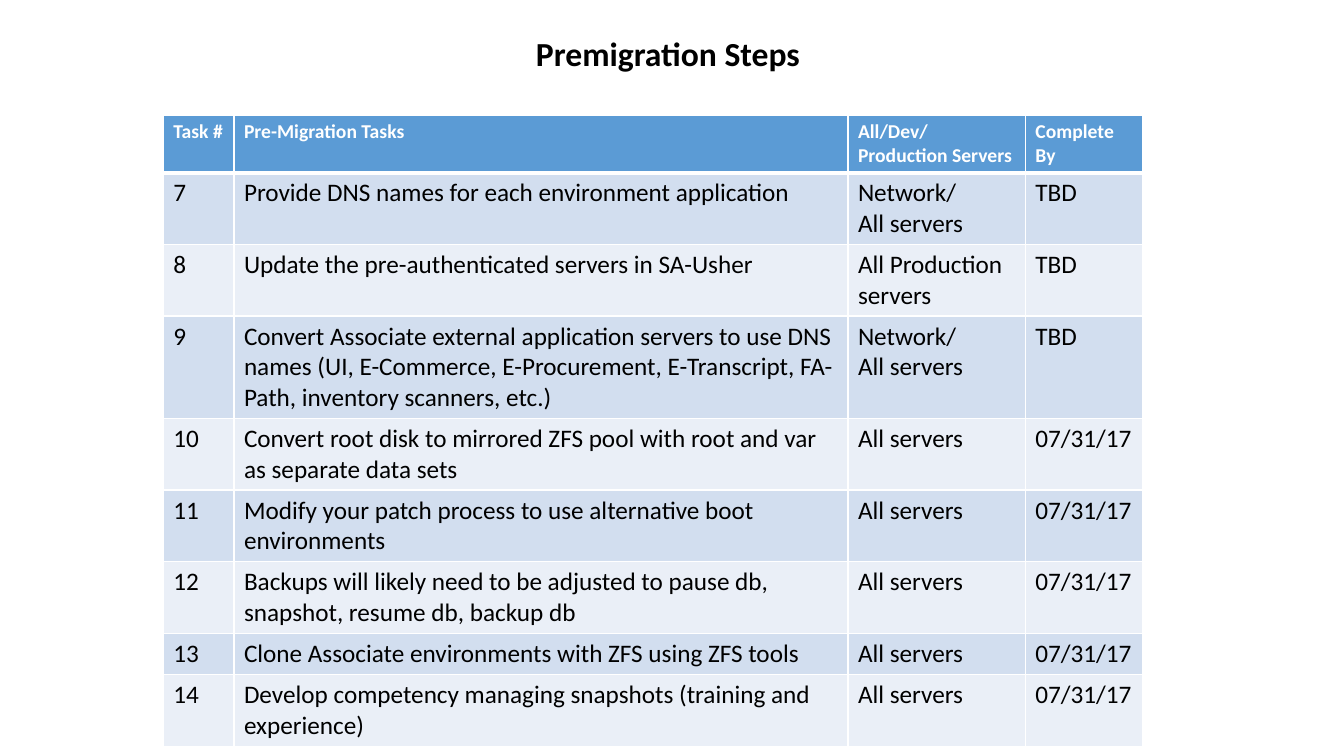
from typing import NamedTuple

from lxml import etree
from pptx import Presentation
from pptx.dml.color import RGBColor
from pptx.enum.text import MSO_ANCHOR, PP_ALIGN
from pptx.oxml.ns import qn
from pptx.util import Emu, Pt

CENTER = PP_ALIGN.CENTER
LEFT = PP_ALIGN.LEFT
TOP = MSO_ANCHOR.TOP
SCALE = 9144  # EMU in one px, 100 px to the inch
FACE = "Calibri"
BLACK, WHITE, BLUE = "000000", "FFFFFF", "5B9BD5"
BANDS = ("D2DEEF", "EAEFF7")
THIN, THICK = 1, 3
TITLE = {"name": FACE, "size": Pt(24), "bold": True}
HEAD = {"name": FACE, "size": Pt(14), "bold": True}
BODY = {"name": FACE, "size": Pt(18), "bold": False}


class Task(NamedTuple):
    text: str
    scope: str
    due: str
    high: int


FIRST = 7
WIDTHS = (70, 609, 176, 116)
HEADS = ("Task #", "Pre-Migration Tasks", "All/Dev/ Production Servers", "Complete\nBy")
HEAD_HIGH = 57
NET, ALL = "Network/\nAll servers", "All servers"
TBD, JULY = "TBD", "07/31/17"
TASKS = (
    Task("Provide DNS names for each environment application", NET, TBD, 70),
    Task("Update the pre-authenticated servers in SA-Usher",
         "All Production servers", TBD, 70),
    Task("Convert Associate external application servers to use DNS names "
         "(UI, E-Commerce, E-Procurement, E-Transcript, FA-Path, "
         "inventory scanners, etc.)", NET, TBD, 100),
    Task("Convert root disk to mirrored ZFS pool with root and var "
         "as separate data sets", ALL, JULY, 70),
    Task("Modify your patch process to use alternative boot environments",
         ALL, JULY, 70),
    Task("Backups will likely need to be adjusted to pause db, "
         "snapshot, resume db, backup db", ALL, JULY, 70),
    Task("Clone Associate environments with ZFS using ZFS tools", ALL, JULY, 41),
    Task("Develop competency managing snapshots (training and experience)",
         ALL, JULY, 70),
)


def px(size: int) -> Emu:
    return Emu(size * SCALE)


def color(code: str) -> RGBColor:
    return RGBColor.from_string(code)


def write(frame, text: str, style: dict, ink: str, align=LEFT) -> None:
    frame.word_wrap = True
    frame.text = text
    for para in frame.paragraphs:
        para.alignment = align
        for run in para.runs:
            for key, value in style.items():
                setattr(run.font, key, value)
            run.font.color.rgb = color(ink)


def border(cell, top: int, bottom: int) -> None:
    props = cell._tc.get_or_add_tcPr()
    sides = {"a:lnL": THIN, "a:lnR": THIN, "a:lnT": top, "a:lnB": bottom}
    for spot, (tag, width) in enumerate(sides.items()):
        line = etree.Element(qn(tag), w=str(Pt(width)))
        fill = etree.SubElement(line, qn("a:solidFill"))
        etree.SubElement(fill, qn("a:srgbClr"), val=WHITE)
        props.insert(spot, line)


def add_title(slide) -> None:
    box = slide.shapes.add_textbox(px(343), px(28), px(639), px(50))
    write(box.text_frame, "Premigration Steps", TITLE, BLACK, CENTER)


def add_tasks(slide) -> None:
    rows = [HEADS] + [(str(num), task.text, task.scope, task.due)
                      for num, task in enumerate(TASKS, FIRST)]
    highs = [HEAD_HIGH] + [task.high for task in TASKS]
    table = slide.shapes.add_table(len(rows), len(WIDTHS), px(162), px(114),
                                   px(sum(WIDTHS)), px(sum(highs))).table
    for col, width in zip(table.columns, WIDTHS):
        col.width = px(width)
    for num, (row, texts, high) in enumerate(zip(table.rows, rows, highs)):
        row.height = px(high)
        # Header row first, then two bands in turn
        if num == 0:
            style, ink, back = HEAD, WHITE, BLUE
        else:
            style, ink, back = BODY, BLACK, BANDS[(num - 1) % 2]
        for cell, text in zip(row.cells, texts):
            cell.vertical_anchor = TOP
            cell.fill.solid()
            cell.fill.fore_color.rgb = color(back)
            border(cell, THICK if num == 1 else THIN, THICK if num == 0 else THIN)
            write(cell.text_frame, text, style, ink)


def main() -> None:
    deck = Presentation()
    deck.slide_width, deck.slide_height = px(1333), px(750)
    slide = deck.slides.add_slide(deck.slide_layouts[6])
    add_tasks(slide)
    add_title(slide)
    deck.save("out.pptx")


if __name__ == "__main__":
    main()
